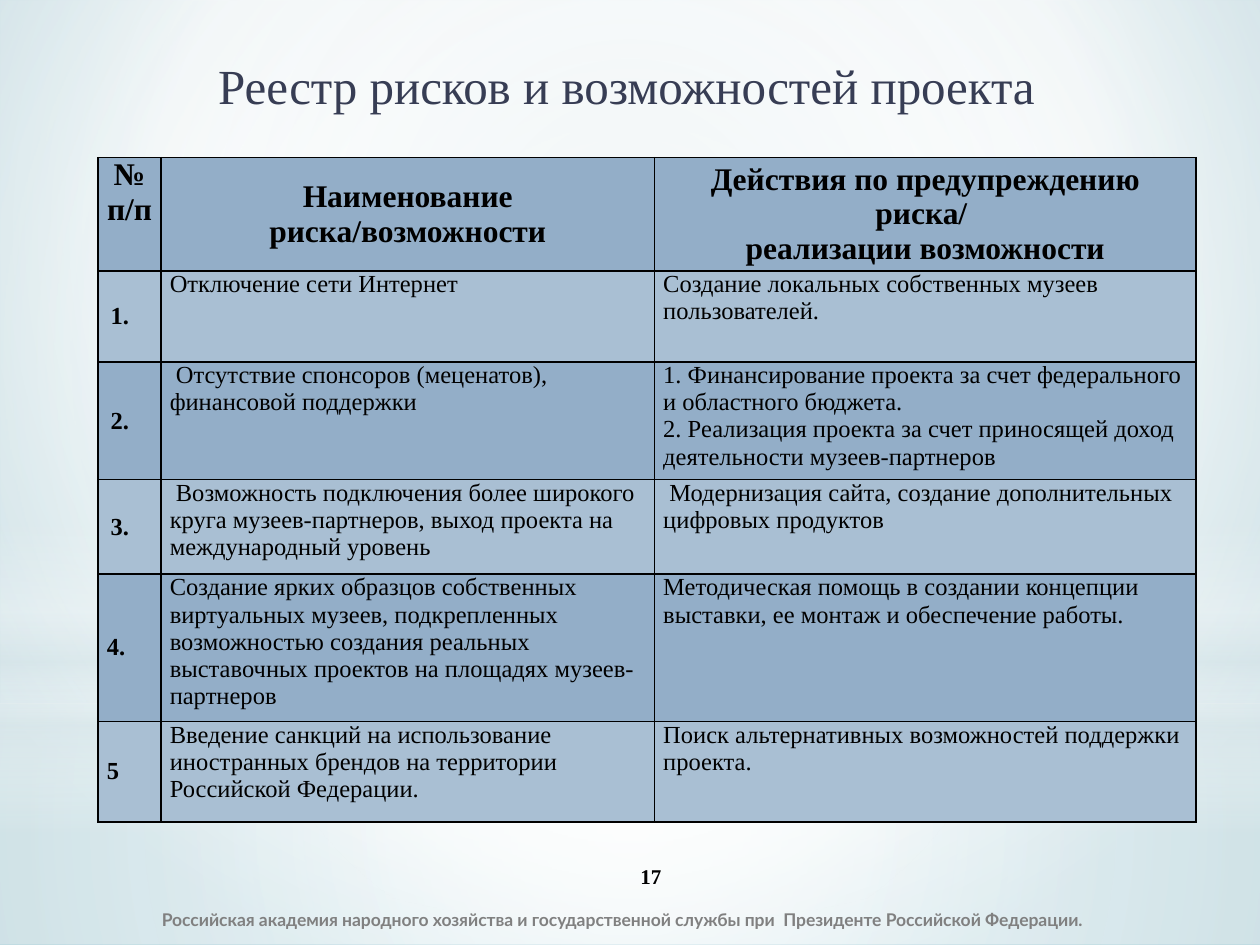
from lxml import etree
from pptx import Presentation
from pptx.dml.color import RGBColor
from pptx.enum import shapes, text
from pptx.oxml import parse_xml
from pptx.oxml.ns import nsdecls, qn
from pptx.util import Pt

SERIF = "Times New Roman"
BLACK = "000000"
ROW_FILLS = ["93AEC8", "A9BFD3"]
COLUMN_WIDTHS = [36, 282, 309.5]
ROW_HEIGHTS = [59, 52, 61.5, 54, 77, 57.5]
HEADINGS = ["№\nп/п", "Наименование риска/возможности",
            "Действия по предупреждению риска/ \nреализации возможности"]
RISKS = [
    ["1.", "Отключение сети Интернет",
     "Создание локальных собственных музеев пользователей."],
    ["2.", "\u00a0Отсутствие спонсоров (меценатов), финансовой поддержки".replace("\u00a0", " "),
     "1. Финансирование проекта за счет федерального и областного бюджета.\n"
     "2. Реализация проекта за счет приносящей доход деятельности музеев-партнеров"],
    ["3.", " Возможность подключения более широкого круга музеев-партнеров, "
     "выход проекта на международный уровень",
     " Модернизация сайта, создание дополнительных цифровых продуктов"],
    ["4.", "Создание ярких образцов собственных виртуальных музеев, подкрепленных "
     "возможностью создания реальных выставочных проектов на площадях музеев-партнеров",
     "Методическая помощь в создании концепции выставки, ее монтаж и обеспечение работы."],
    ["5", "Введение санкций на использование иностранных брендов на территории "
     "Российской Федерации.",
     "Поиск альтернативных возможностей поддержки проекта."],
]


def color(value):
    return RGBColor.from_string(value)


def write(frame, content, size=14, font=SERIF, fill=BLACK, bold=False,
          align=text.PP_ALIGN.LEFT, spacing=None):
    for index, line in enumerate(content.split("\n")):
        paragraph = frame.add_paragraph() if index else frame.paragraphs[0]
        paragraph.alignment = align
        if spacing:
            paragraph.line_spacing = spacing
        run = paragraph.add_run()
        run.text = line
        run.font.size = Pt(size)
        run.font.name = font
        run.font.bold = bold
        run.font.color.rgb = color(fill)


def add_text(slide, box, content, left_inset=7.2, **style):
    frame = slide.shapes.add_textbox(*map(Pt, box)).text_frame
    frame.word_wrap = True
    frame.vertical_anchor = text.MSO_ANCHOR.MIDDLE
    frame.margin_left = Pt(left_inset)
    write(frame, content, **style)


def set_gradient(properties, stops, focus=None):
    gradient = parse_xml(f'<a:gradFill {nsdecls("a")} rotWithShape="1"><a:gsLst/></a:gradFill>')
    for position, value, opacity in stops:
        stop = etree.SubElement(gradient[0], qn("a:gs"), pos=str(position * 1000))
        tint = etree.SubElement(stop, qn("a:srgbClr"), val=value)
        if opacity < 100:
            etree.SubElement(tint, qn("a:alpha"), val=str(opacity * 1000))
    if focus:
        route = etree.SubElement(gradient, qn("a:path"))
        route.set("path", "circle")
        sides = {side: str(share * 1000) for side, share in zip("ltrb", focus)}
        etree.SubElement(route, qn("a:fillToRect"), **sides)
    else:
        etree.SubElement(gradient, qn("a:lin"), ang="5400000", scaled="0")
    properties.replace(properties.find(qn("a:solidFill")), gradient)


def add_glow(slide, box, kind, stops, focus=None):
    shape = slide.shapes.add_shape(kind, *map(Pt, box))
    shape.shadow.inherit = False
    shape.line.fill.background()
    shape.fill.solid()
    set_gradient(shape.element.spPr, stops, focus)


def add_backdrop(slide, box):
    left, top, width, height = box
    center = (50, 50, 50, 50)
    rectangle = shapes.MSO_SHAPE.RECTANGLE
    slide.background.fill.solid()
    set_gradient(next(slide.element.iter(qn("p:bgPr"))),
                 [(0, "D0E2E6", 100), (60, "FFFFFF", 100), (100, "9BC8D4", 100)],
                 (20, 10, 20, 60))
    horizon = 402
    add_glow(slide, (left, top + horizon, width, height - horizon), rectangle,
             [(0, "FFFFFF", 91), (37, "FFFFFF", 76), (100, "DDE9EC", 79)], center)
    add_glow(slide, (left, top, width, horizon), rectangle,
             [(0, "FFFFFF", 89), (48, "FFFFFF", 62), (100, "DDE9EC", 79)], center)
    add_glow(slide, (left, top + 297, width, 180), rectangle,
             [(0, "FFFFFF", 0), (29, "FFFFFF", 30), (45, "DDE9EC", 40),
              (55, "FFFFFF", 26), (65, "DDE9EC", 60), (100, "FFFFFF", 0)])
    add_glow(slide, (left, top + 126, width, horizon), shapes.MSO_SHAPE.OVAL,
             [(0, "FFFFFF", 100), (56, "FFFFFF", 0)], center)


def format_cell(cell, fill, middle, wide_inset):
    cell.fill.solid()
    cell.fill.fore_color.rgb = color(fill)
    cell.margin_left = cell.margin_right = Pt(7.2 if wide_inset else 5)
    cell.margin_top = cell.margin_bottom = Pt(3.6 if wide_inset else 0)
    cell.vertical_anchor = text.MSO_ANCHOR.MIDDLE if middle else text.MSO_ANCHOR.TOP
    properties = cell._tc.get_or_add_tcPr()
    for index, side in enumerate("LRTB"):
        properties.insert(index, parse_xml(
            f'<a:ln{side} {nsdecls("a")} w="12700"><a:solidFill>'
            f'<a:srgbClr val="{BLACK}"/></a:solidFill></a:ln{side}>'))


def add_register(slide, box):
    rows = [HEADINGS] + RISKS
    table = slide.shapes.add_table(len(rows), len(HEADINGS), *map(Pt, box)).table
    table.first_row = table.horz_banding = False
    for column, width in zip(table.columns, COLUMN_WIDTHS):
        column.width = Pt(width)
    for row_index, values in enumerate(rows):
        table.rows[row_index].height = Pt(ROW_HEIGHTS[row_index])
        heading = row_index == 0
        for column_index, value in enumerate(values):
            number = column_index == 0
            cell = table.cell(row_index, column_index)
            format_cell(cell, ROW_FILLS[row_index % 2], heading != number,
                        number and row_index in (1, 2, 3))
            write(cell.text_frame, value, size=18 if heading else 14,
                  bold=heading or number,
                  align=text.PP_ALIGN.CENTER if heading else text.PP_ALIGN.LEFT)


def add_footer(slide, box):
    left, top, width, height = box
    add_text(slide, (left, top + 25, width, height),
             "Российская академия народного хозяйства и государственной службы при"
             "  Президенте Российской Федерации.",
             left_inset=22, size=10, font="Lato", fill="808080", bold=True)
    add_text(slide, (left + 229.5, top, 144, height), "17", size=12, bold=True,
             align=text.PP_ALIGN.CENTER)


def main():
    presentation = Presentation()
    presentation.slide_width, presentation.slide_height = Pt(720), Pt(540)
    slide = presentation.slides.add_slide(presentation.slide_layouts[6])
    add_backdrop(slide, (0, 0, 720, 540))
    add_footer(slide, (70.5, 486, 629, 29))
    add_text(slide, (56, 18, 604, 65), "Реестр рисков и возможностей проекта",
             size=28, fill="373D54", align=text.PP_ALIGN.CENTER, spacing=0.9)
    add_register(slide, (56, 90, sum(COLUMN_WIDTHS), sum(ROW_HEIGHTS)))
    presentation.save("out.pptx")


if __name__ == "__main__":
    main()
